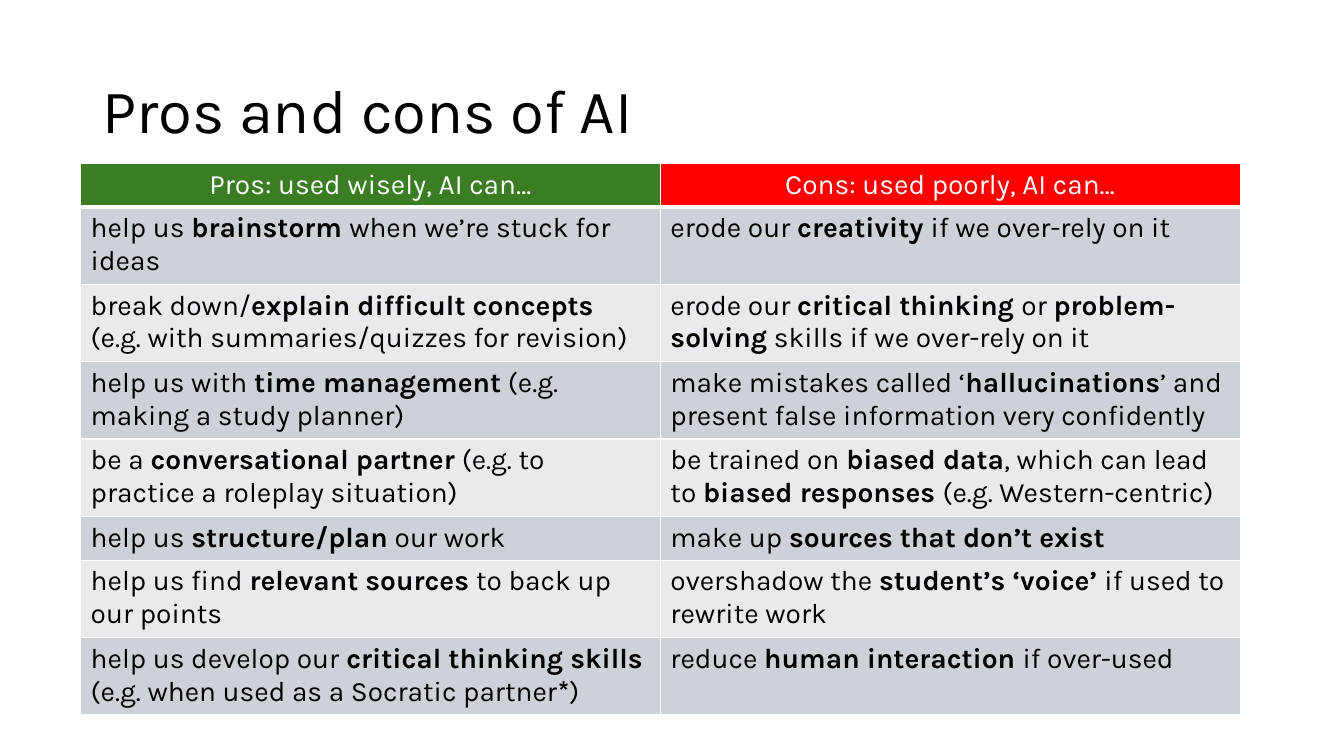
import pptx
import pptx.dml.color
import pptx.enum.text
import pptx.oxml
import pptx.oxml.ns
import pptx.util

COLORS = {"text": "000000", "light": "FFFFFF", "pros": "3B7D23", "cons": "FF0000",
          "odd": "CCD2D8", "even": "E8EAED"}
FONT = "Karla"
WIDTH, HEIGHT = 13.33, 7.5
ROW_HEIGHT = 0.41
BOLD_MARK = "|"

HEADINGS = [("Pros: used wisely, AI can…", "pros"), ("Cons: used poorly, AI can…", "cons")]
ARGUMENTS = [
    ("help us |brainstorm |when we’re stuck for ideas",
     "erode our |creativity |if we over-rely on it"),
    ("break down/|explain difficult concepts| (e.g. with summaries/quizzes for revision)",
     "erode our |critical thinking |or |problem-solving| skills if we over-rely on it"),
    ("help us with |time management| (e.g. making a study planner)",
     "make mistakes called ‘|hallucinations|’ and present false information very confidently"),
    ("be a |conversational partner| (e.g. to practice a roleplay situation)",
     "be trained on |biased data|, which can lead to |biased responses |(e.g. Western-centric)"),
    ("help us |structure/plan| our work",
     "make up |sources that don’t exist"),
    ("help us find |relevant sources| to back up our points",
     "overshadow the |student’s ‘voice’ |if used to rewrite work"),
    ("help us develop our |critical thinking skills| (e.g. when used as a Socratic partner|*|)",
     "reduce |human interaction |if over-used"),
]


def rgb(color):
    return pptx.dml.color.RGBColor.from_string(COLORS[color])


def add_runs(paragraph, marked_text, size, color):
    for index, part in enumerate(marked_text.split(BOLD_MARK)):
        run = paragraph.add_run()
        run.text = part
        run.font.name = FONT
        run.font.size = pptx.util.Pt(size)
        run.font.bold = index % 2 == 1
        run.font.color.rgb = rgb(color)


def add_borders(cell, bottom_width):
    properties = cell._tc.get_or_add_tcPr()
    for side, width in (("L", 1), ("R", 1), ("T", 1), ("B", bottom_width)):
        properties.append(pptx.oxml.parse_xml(
            f'<a:ln{side} {pptx.oxml.ns.nsdecls("a")} w="{pptx.util.Pt(width)}">'
            f'<a:solidFill><a:srgbClr val="{COLORS["light"]}"/></a:solidFill></a:ln{side}>'))


def fill_cell(cell, marked_text, text_color, background, bottom_width=1):
    add_borders(cell, bottom_width)
    cell.fill.solid()
    cell.fill.fore_color.rgb = rgb(background)
    add_runs(cell.text_frame.paragraphs[0], marked_text, 20, text_color)


def add_title(slide, left, top, width, height):
    title = slide.shapes.add_textbox(*map(pptx.util.Inches, (left, top, width, height)))
    frame = title.text_frame
    frame.word_wrap = True
    frame.vertical_anchor = pptx.enum.text.MSO_ANCHOR.MIDDLE
    frame.paragraphs[0].line_spacing = 0.9
    add_runs(frame.paragraphs[0], "Pros and cons of AI", 44, "text")


def add_comparison(slide, left, top, width):
    row_count = len(ARGUMENTS) + 1
    box = map(pptx.util.Inches, (left, top, width, ROW_HEIGHT * row_count))
    comparison = slide.shapes.add_table(row_count, len(HEADINGS), *box).table
    for column, (heading, background) in enumerate(HEADINGS):
        cell = comparison.cell(0, column)
        fill_cell(cell, heading, "light", background, bottom_width=3)
        cell.text_frame.paragraphs[0].alignment = pptx.enum.text.PP_ALIGN.CENTER
    for row, arguments in enumerate(ARGUMENTS, start=1):
        background = "odd" if row % 2 else "even"
        for column, argument in enumerate(arguments):
            fill_cell(comparison.cell(row, column), argument, "text", background)


def main():
    deck = pptx.Presentation()
    deck.slide_width = pptx.util.Inches(WIDTH)
    deck.slide_height = pptx.util.Inches(HEIGHT)
    slide = deck.slides.add_slide(deck.slide_layouts[6])
    content_width = 11.5
    add_title(slide, (WIDTH - content_width) / 2, 0.4, content_width, 1.45)
    add_comparison(slide, 0.8, 1.62, content_width)
    deck.save("out.pptx")


if __name__ == "__main__":
    main()
